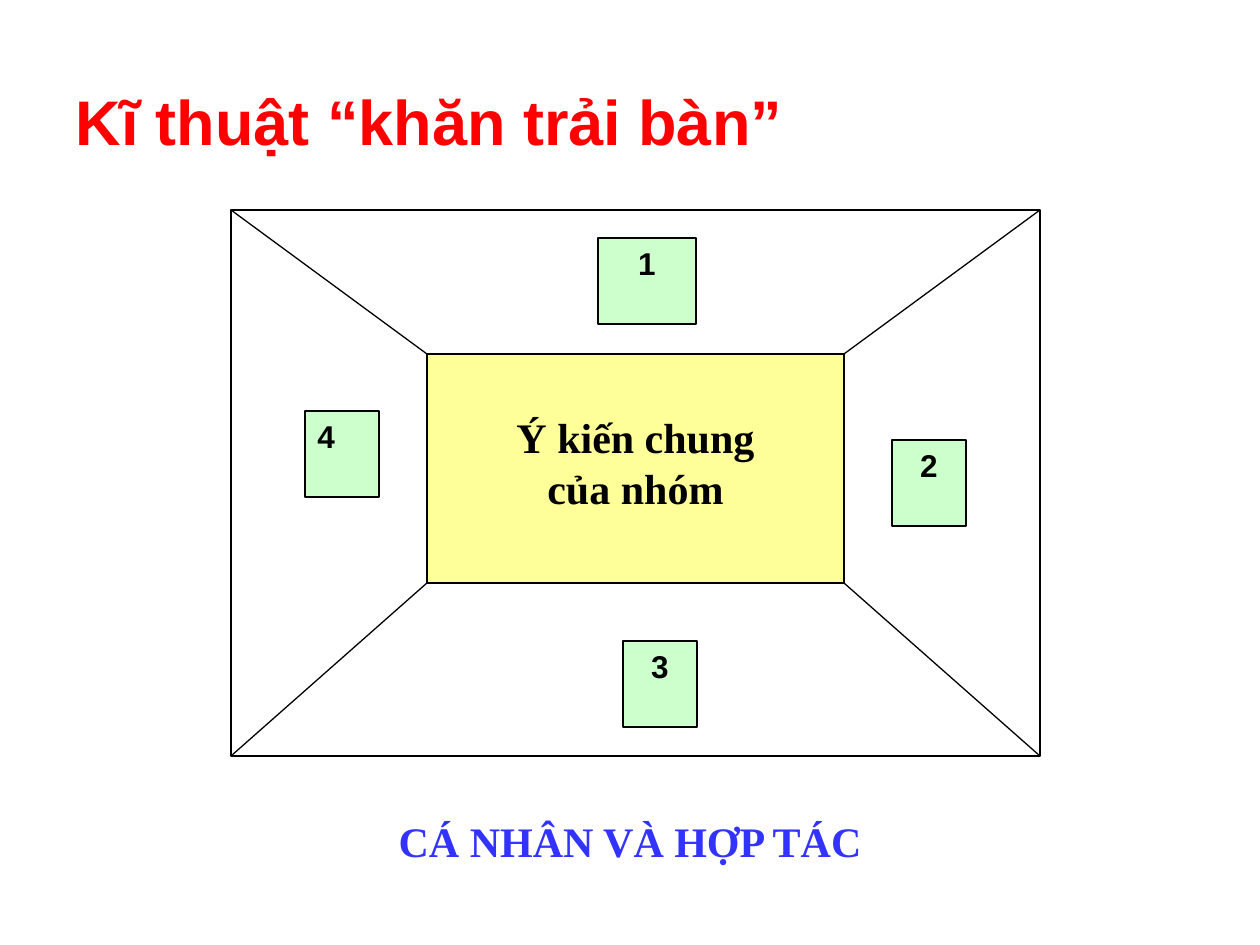
from dataclasses import dataclass

import pptx
import pptx.dml.color
import pptx.enum.shapes
import pptx.enum.text
import pptx.oxml.ns
import pptx.shapes.autoshape
import pptx.util
from lxml import etree

EMU_PER_PX = 914400 / 126
ALIGN = pptx.enum.text.PP_ALIGN
ANCHOR = pptx.enum.text.MSO_ANCHOR


@dataclass(frozen=True)
class Theme:
    title: str = "FF0000"
    caption: str = "3333FF"
    ink: str = "000000"
    paper: str = "FFFFFF"
    center: str = "FFFF99"
    seat: str = "CCFFCC"
    sans: str = "Arial"
    serif: str = "Times New Roman"
    title_size: int = 36
    body_size: int = 24
    seat_size: int = 18
    line_width: float = 0.75


@dataclass(frozen=True)
class Rect:
    left: int
    top: int
    width: int
    height: int

    def corners(self) -> list[tuple[int, int]]:
        right, bottom = self.left + self.width, self.top + self.height
        return [(x, y) for x in (self.left, right) for y in (self.top, bottom)]


@dataclass(frozen=True)
class Seat:
    label: str
    rect: Rect
    align: ALIGN = ALIGN.CENTER


THEME = Theme()
CLOTH = Rect(231, 210, 809, 546)
CENTER = Rect(427, 354, 417, 229)
SEATS = [
    Seat("1", Rect(598, 238, 98, 86)),
    Seat("2", Rect(892, 440, 74, 86)),
    Seat("3", Rect(623, 641, 74, 86)),
    Seat("4", Rect(305, 411, 74, 86), ALIGN.LEFT),
]


def px(length: int) -> int:
    return round(length * EMU_PER_PX)


def bounds(rect: Rect) -> tuple[int, int, int, int]:
    return px(rect.left), px(rect.top), px(rect.width), px(rect.height)


def rgb(color: str) -> pptx.dml.color.RGBColor:
    return pptx.dml.color.RGBColor.from_string(color)


def write(frame, lines: list[str], font: str, size: int, color: str,
          align: ALIGN, anchor: ANCHOR = ANCHOR.TOP) -> None:
    frame.word_wrap = True
    frame.vertical_anchor = anchor
    frame.text = "\n".join(lines)
    for para in frame.paragraphs:
        para.alignment = align
        para.font.name = font
        para.font.size = pptx.util.Pt(size)
        para.font.bold = True
        para.font.color.rgb = rgb(color)


def add_box(shapes, rect: Rect, fill: str) -> pptx.shapes.autoshape.Shape:
    box = shapes.add_shape(pptx.enum.shapes.MSO_SHAPE.RECTANGLE, *bounds(rect))
    box.shadow.inherit = False
    box.fill.solid()
    box.fill.fore_color.rgb = rgb(fill)
    box.line.color.rgb = rgb(THEME.ink)
    box.line.width = pptx.util.Pt(THEME.line_width)
    return box


def add_line(shapes, start: tuple[int, int], end: tuple[int, int]) -> None:
    line = shapes.add_connector(
        pptx.enum.shapes.MSO_CONNECTOR.STRAIGHT, *map(px, start + end))
    line.line.color.rgb = rgb(THEME.ink)
    line.line.width = pptx.util.Pt(THEME.line_width)
    etree.SubElement(line._element.spPr, pptx.oxml.ns.qn("a:effectLst"))


def main() -> None:
    deck = pptx.Presentation()
    deck.slide_width, deck.slide_height = px(1260), px(945)
    page = deck.slides.add_slide(deck.slide_layouts.get_by_name("Title Only"))

    # Title
    title = page.shapes.title
    title.left, title.top, title.width, title.height = bounds(Rect(63, 42, 1144, 157))
    write(title.text_frame, ["Kĩ thuật “khăn trải bàn”"], THEME.sans,
          THEME.title_size, THEME.title, ALIGN.LEFT, ANCHOR.MIDDLE)

    # Tablecloth: outer edge, shared centre and the folds between their corners
    cloth = page.shapes.add_group_shape().shapes
    add_box(cloth, CLOTH, THEME.paper)
    center = add_box(cloth, CENTER, THEME.center)
    write(center.text_frame, ["Ý kiến chung", "của nhóm"], THEME.serif,
          THEME.body_size, THEME.ink, ALIGN.CENTER)
    center.text_frame.margin_top = px(58)
    for inner, outer in zip(CENTER.corners(), CLOTH.corners()):
        add_line(cloth, inner, outer)

    # Numbered seats
    for seat in SEATS:
        box = add_box(cloth, seat.rect, THEME.seat)
        write(box.text_frame, [seat.label], THEME.sans, THEME.seat_size,
              THEME.ink, seat.align)

    # Caption
    caption = page.shapes.add_textbox(*bounds(Rect(231, 809, 798, 63)))
    write(caption.text_frame, ["CÁ NHÂN VÀ HỢP TÁC"], THEME.serif,
          THEME.body_size, THEME.caption, ALIGN.CENTER)

    deck.save("out.pptx")


if __name__ == "__main__":
    main()
